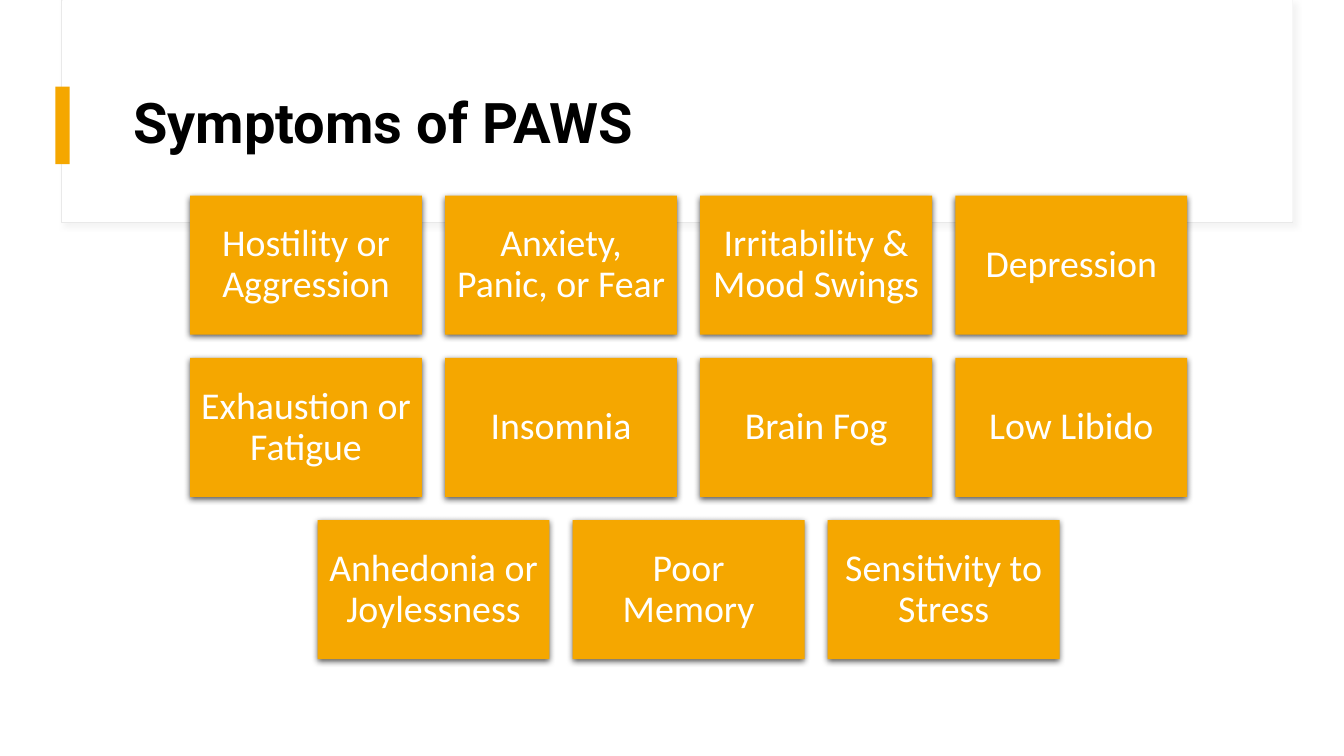
from dataclasses import dataclass

from lxml import etree
from pptx import Presentation
from pptx.dml.color import RGBColor
from pptx.enum.shapes import MSO_SHAPE
from pptx.enum.text import MSO_ANCHOR, MSO_AUTO_SIZE, PP_ALIGN
from pptx.oxml.ns import qn
from pptx.util import Inches, Pt

RECT = MSO_SHAPE.RECTANGLE
MIDDLE = MSO_ANCHOR.MIDDLE
LEFT, CENTER = PP_ALIGN.LEFT, PP_ALIGN.CENTER
NO_FIT = MSO_AUTO_SIZE.NONE


@dataclass(frozen=True)
class Theme:
    accent: str = "F5A700"
    paper: str = "FFFFFF"
    ink: str = "000000"
    frame_line: str = "E9E9E9"
    frame_shadow: str = "D9D9D9"
    title_font: str = "Roboto"
    card_font: str = "Calibri"
    title_size: int = 40
    card_size: int = 27


theme = Theme()


def add_rect(shapes, left, top, width, height, fill):
    rect = shapes.add_shape(RECT, Inches(left), Inches(top), Inches(width), Inches(height))
    rect.shadow.inherit = False
    rect.fill.solid()
    rect.fill.fore_color.rgb = RGBColor.from_string(fill)
    rect.line.fill.background()
    return rect


def add_shadow(shape, color, opacity, blur, distance, angle):
    """Outer shadow: opacity in percent, blur and distance in points, angle in degrees."""
    effects = shape.element.spPr.find(qn("a:effectLst"))
    shadow = etree.SubElement(effects, qn("a:outerShdw"), blurRad=str(Pt(blur)),
                              dist=str(Pt(distance)), dir=str(angle * 60000),
                              algn="ctr", rotWithShape="0")
    clr = etree.SubElement(shadow, qn("a:srgbClr"), val=color)
    etree.SubElement(clr, qn("a:alpha"), val=str(opacity * 1000))


prs = Presentation()
prs.slide_width, prs.slide_height = Inches(13.33), Inches(7.5)
s = prs.slides.add_slide(prs.slide_layouts[5])

# Header frame and accent bar
frame = add_rect(s.shapes, 0.61, 0, 12.21, 2.21, theme.paper)
frame.line.color.rgb = RGBColor.from_string(theme.frame_line)
frame.line.width = Pt(0.75)
add_shadow(frame, theme.frame_shadow, 30, 4, 3, 45)
add_rect(s.shapes, 0.62, 0, 12.2, 2.2, theme.paper)
add_rect(s.shapes, 0.55, 0.86, 0.14, 0.77, theme.accent)

# Title, lifted above the frame
title = s.shapes.title
s.shapes.element.append(title.element)
title.left, title.top = Inches(1.22), Inches(0.6)
title.width, title.height = Inches(11.12), Inches(1.29)
tf = title.text_frame
tf.text = "Symptoms of PAWS"
tf.auto_size = NO_FIT
tf.vertical_anchor = MIDDLE
p = tf.paragraphs[0]
p.alignment = LEFT
p.line_spacing = 0.9
p.font.name = theme.title_font
p.font.size = Pt(theme.title_size)
p.font.bold = True
p.font.color.rgb = RGBColor.from_string(theme.ink)

# Symptom cards, each row centred on the same axis
SYMPTOMS = [
    ["Hostility or Aggression", "Anxiety, Panic, or Fear",
     "Irritability & Mood Swings", "Depression"],
    ["Exhaustion or Fatigue", "Insomnia", "Brain Fog", "Low Libido"],
    ["Anhedonia or Joylessness", "Poor Memory", "Sensitivity to Stress"],
]
CARD_W, CARD_H, GAP = 2.3, 1.38, 0.23
GRID_CENTER, GRID_TOP = 6.83, 1.94
INSET = Inches(0.11)

for row, names in enumerate(SYMPTOMS):
    row_width = len(names) * (CARD_W + GAP) - GAP
    row_left = GRID_CENTER - row_width / 2
    for col, name in enumerate(names):
        card = add_rect(s.shapes, row_left + col * (CARD_W + GAP),
                        GRID_TOP + row * (CARD_H + GAP), CARD_W, CARD_H, theme.accent)
        add_shadow(card, theme.ink, 63, 4.5, 1.5, 90)
        tf = card.text_frame
        tf.text = name
        tf.word_wrap = True
        tf.vertical_anchor = MIDDLE
        tf.margin_left = tf.margin_right = tf.margin_top = tf.margin_bottom = INSET
        p = tf.paragraphs[0]
        p.alignment = CENTER
        p.line_spacing = 0.9
        p.font.name = theme.card_font
        p.font.size = Pt(theme.card_size)
        p.font.color.rgb = RGBColor.from_string(theme.paper)

prs.save("out.pptx")
